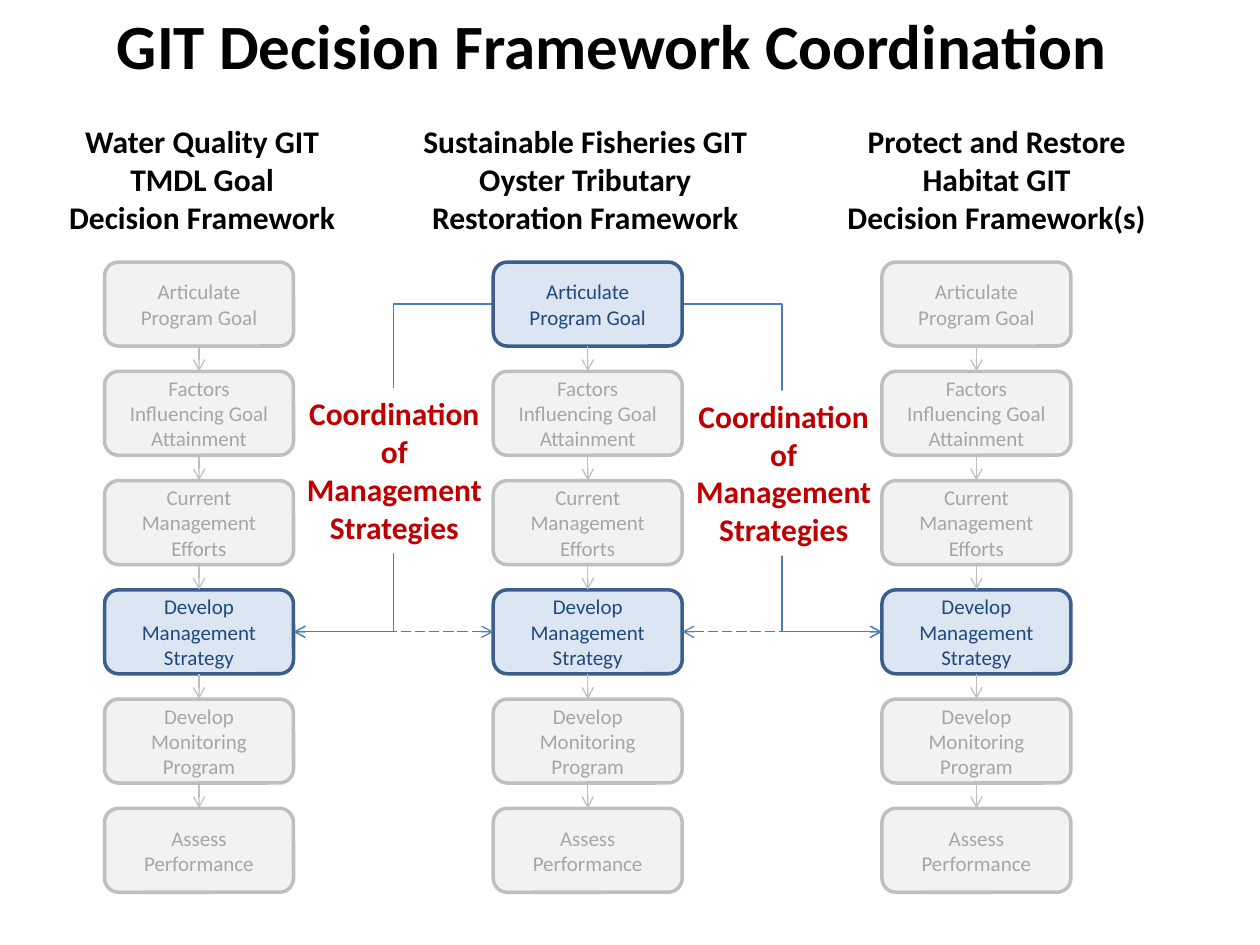
"""Build the GIT decision framework coordination slide."""
from lxml import etree
from pptx import Presentation
from pptx.dml.color import RGBColor
from pptx.enum import dml, shapes, text
from pptx.oxml.ns import qn
from pptx.util import Inches, Pt

COLORS = {
    "black": "000000", "white": "FFFFFF", "red": "C00000", "link": "4B7EBC",
    "gray_fill": "F2F2F2", "gray_line": "BFBFBF", "gray_text": "A6A6A6",
    "blue_fill": "DCE6F2", "blue_line": "3A5F8C", "blue_text": "1F497D",
}
RGB = {name: RGBColor.from_string(value) for name, value in COLORS.items()}
STEPS = [
    "Articulate Program Goal", "Factors Influencing Goal Attainment",
    "Current Management Efforts", "Develop Management Strategy",
    "Develop\nMonitoring Program", "Assess Performance",
]
HEADINGS = [
    (0.44, 2.33, "Water Quality GIT\nTMDL Goal\nDecision Framework"),
    (3.25, 2.79, "Sustainable Fisheries GIT\nOyster Tributary\nRestoration Framework"),
    (6.59, 2.64, "Protect and Restore\nHabitat GIT\nDecision Framework(s)"),
]
COORDINATION = "Coordination\nof\nManagement\nStrategies"
HIGHLIGHTED = {(0, 3), (1, 0), (1, 3), (2, 3)}
BOX_W, BOX_H = 1.5, 2 / 3
COLUMNS = [0.83 + 3.085 * i for i in range(3)]
ROWS = [2.08 + 0.867 * i for i in range(len(STEPS))]
GOAL_Y, STRATEGY_Y = ROWS[0] + BOX_H / 2, ROWS[3] + BOX_H / 2

prs = Presentation()
prs.slide_width, prs.slide_height = Inches(10), Inches(7.5)
s = prs.slides.add_slide(prs.slide_layouts[6])


def write(sp, words, size, color, bold=False, align=text.PP_ALIGN.CENTER, wrap=False):
    tf = sp.text_frame
    tf.text = words
    tf.word_wrap = wrap
    for p in tf.paragraphs:
        p.alignment = align
        for r in p.runs:
            r.font.name, r.font.size, r.font.bold = "Calibri", Pt(size), bold
            r.font.color.rgb = RGB[color]


def connect(kind, x1, y1, x2, y2, color, ends=("tailEnd",), dash=None):
    c = s.shapes.add_connector(kind, Inches(x1), Inches(y1), Inches(x2), Inches(y2))
    c.line.color.rgb = RGB[color]
    c.line.width = Pt(0.75)
    c.line.dash_style = dash
    ln = c.line._get_or_add_ln()
    for end in ends:
        etree.SubElement(ln, qn("a:" + end), type="arrow")
    etree.SubElement(c._element.spPr, qn("a:effectLst"))


STRAIGHT, ELBOW = shapes.MSO_CONNECTOR.STRAIGHT, shapes.MSO_CONNECTOR.ELBOW
left_edge, right_edge = COLUMNS[1], COLUMNS[1] + BOX_W
links = [
    (right_edge, COLUMNS[2], 5.42, 3.1),
    (left_edge, COLUMNS[0] + BOX_W, 2.33, 3.08),
]

for start, end, label_x, label_y in links:
    connect(ELBOW, start, GOAL_Y, end, STRATEGY_Y, "link")
    sp = s.shapes.add_textbox(Inches(label_x), Inches(label_y), Inches(1.6), Inches(1.31))
    sp.fill.solid()
    sp.fill.fore_color.rgb = RGB["white"]
    write(sp, COORDINATION, 18, "red", bold=True)

for x, width, heading in HEADINGS:
    sp = s.shapes.add_textbox(Inches(x), Inches(0.92), Inches(width), Inches(1.01))
    write(sp, heading, 18, "black", bold=True)

for col, x in enumerate(COLUMNS):
    for row, (y, step) in enumerate(zip(ROWS, STEPS)):
        tone = "blue" if (col, row) in HIGHLIGHTED else "gray"
        sp = s.shapes.add_shape(shapes.MSO_SHAPE.ROUNDED_RECTANGLE,
                                Inches(x), Inches(y), Inches(BOX_W), Inches(BOX_H))
        sp.shadow.inherit = False
        sp.fill.solid()
        sp.fill.fore_color.rgb = RGB[tone + "_fill"]
        sp.line.color.rgb = RGB[tone + "_line"]
        sp.line.width = Pt(2)
        sp.text_frame.vertical_anchor = text.MSO_ANCHOR.MIDDLE
        write(sp, step, 12, tone + "_text", wrap=True)

for x in COLUMNS:
    for y, next_y in zip(ROWS, ROWS[1:]):
        middle = x + BOX_W / 2
        connect(STRAIGHT, middle, y + BOX_H, middle, next_y, "gray_line")

sp = s.shapes.add_textbox(Inches(0.83), Inches(0), Inches(8.14), Inches(0.71))
write(sp, "GIT Decision Framework Coordination", 36, "black", bold=True,
      align=text.PP_ALIGN.LEFT)

for start, end, *_ in links:
    connect(STRAIGHT, start, STRATEGY_Y, end, STRATEGY_Y, "link",
            ("headEnd", "tailEnd"), dml.MSO_LINE.LONG_DASH)

prs.save("out.pptx")
